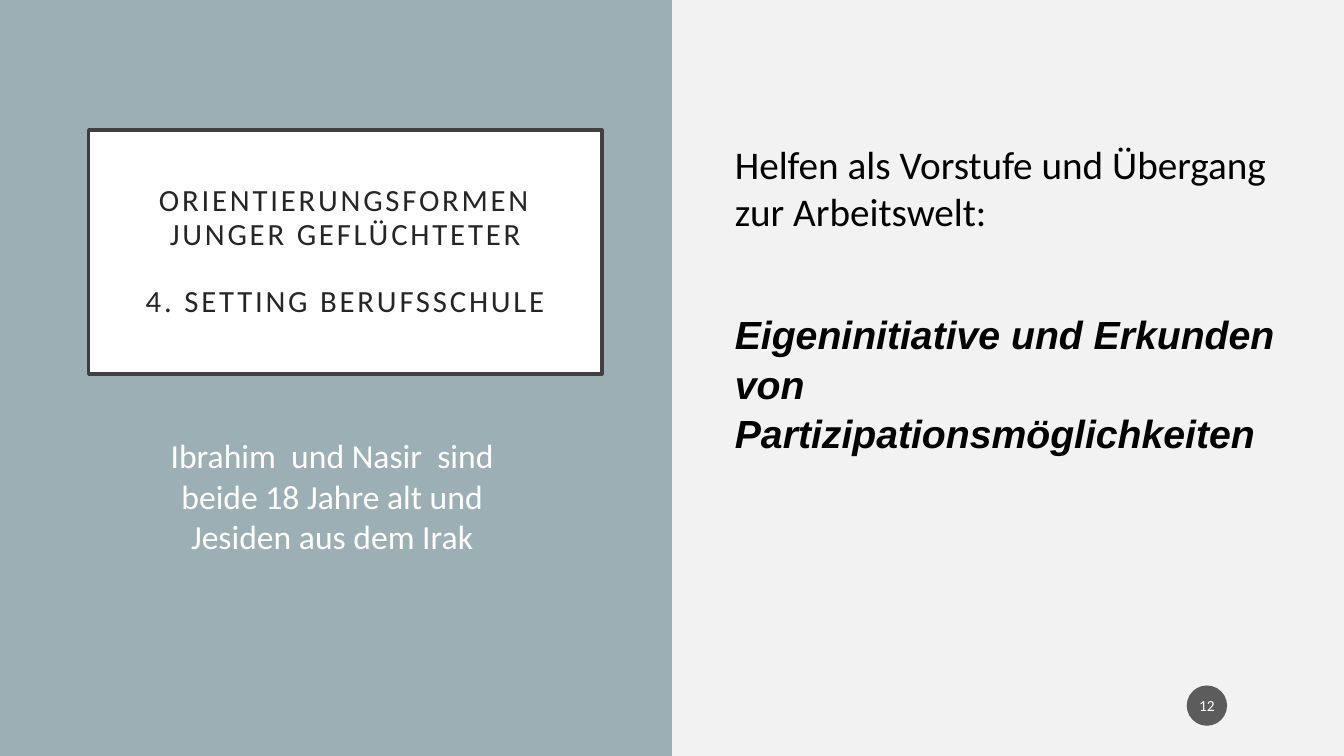
from dataclasses import dataclass

from lxml.etree import SubElement
from pptx import Presentation
from pptx.dml.color import RGBColor
from pptx.enum.shapes import MSO_SHAPE as Preset
from pptx.enum.text import MSO_ANCHOR as Anchor, PP_ALIGN as Align
from pptx.oxml.ns import qn
from pptx.shapes.autoshape import Shape
from pptx.slide import Slide
from pptx.util import Inches, Pt

SLIDE_WIDTH = Inches(13.33)
SLIDE_HEIGHT = Inches(7.5)


@dataclass(frozen=True)
class Area:
    """Position and size in percent of the slide."""
    left: float
    top: float
    width: float
    height: float

    def lengths(self) -> tuple[int, int, int, int]:
        return (
            round(SLIDE_WIDTH * self.left / 100),
            round(SLIDE_HEIGHT * self.top / 100),
            round(SLIDE_WIDTH * self.width / 100),
            round(SLIDE_HEIGHT * self.height / 100),
        )


@dataclass(frozen=True)
class Panel:
    area: Area
    fill: str
    preset: Preset = Preset.RECTANGLE
    line: str | None = None
    opacity: int = 100


LEFT_HALF = Panel(Area(0, 0, 50, 100), "9BAFB5")
TITLE_FRAME = Panel(Area(6.6, 17.2, 38.18, 32.27), "FFFFFF", line="404040")
PAGE_BADGE = Panel(Area(88.3, 90.67, 3, 5.33), "1D1D1D", Preset.OVAL, opacity=70)
STATEMENT_AREA = Area(53.94, 17.87, 42.54, 70.4)
PORTRAIT_AREA = Area(9.15, 56.93, 31.13, 26.8)


def color(value: str) -> RGBColor:
    return RGBColor.from_string(value)


def draw_panel(slide: Slide, panel: Panel) -> Shape:
    shape = slide.shapes.add_shape(panel.preset, *panel.area.lengths())
    shape.shadow.inherit = False
    shape.fill.solid()
    shape.fill.fore_color.rgb = color(panel.fill)
    if panel.opacity < 100:
        fill_color = shape.fill._xPr.find(qn("a:solidFill"))[0]
        SubElement(fill_color, qn("a:alpha"), val=str(panel.opacity * 1000))
    if panel.line:
        shape.line.color.rgb = color(panel.line)
        shape.line.width = Pt(2.5)
    else:
        shape.line.fill.background()
    return shape


def draw_text_box(slide: Slide, area: Area) -> Shape:
    shape = slide.shapes.add_textbox(*area.lengths())
    shape.text_frame.word_wrap = True
    return shape


def set_margins(shape: Shape, horizontal: float, vertical: float) -> None:
    frame = shape.text_frame
    frame.word_wrap = True
    frame.vertical_anchor = Anchor.MIDDLE
    frame.margin_left = frame.margin_right = Inches(horizontal)
    frame.margin_top = frame.margin_bottom = Inches(vertical)


def write(shape: Shape, text: str, *, size: float, fill: str,
          font: str = "Calibri", align: Align = Align.CENTER,
          emphasis: bool = False, before: float = 0,
          line_spacing: float = 1.0, tracking: float = 0) -> None:
    frame = shape.text_frame
    first = frame.paragraphs[0]
    paragraph = frame.add_paragraph() if first.runs else first
    paragraph.alignment = align
    paragraph.space_before = Pt(before)
    paragraph.line_spacing = line_spacing
    run = paragraph.add_run()
    run.text = text
    run.font.name = font
    run.font.size = Pt(size)
    run.font.bold = run.font.italic = emphasis
    run.font.color.rgb = color(fill)
    if tracking:
        run.font._element.set("spc", str(round(tracking * 100)))


def main() -> None:
    presentation = Presentation()
    presentation.slide_width = SLIDE_WIDTH
    presentation.slide_height = SLIDE_HEIGHT
    slide = presentation.slides.add_slide(presentation.slide_layouts[6])
    slide.background.fill.solid()
    slide.background.fill.fore_color.rgb = color("F2F2F2")

    draw_panel(slide, LEFT_HALF)

    title = draw_panel(slide, TITLE_FRAME)
    set_margins(title, 0.2, 0.2)
    title_format = {"size": 22, "fill": "262626", "line_spacing": 0.9, "tracking": 2}
    write(title, "ORIENTIERUNGSFORMEN JUNGER GEFLÜCHTETER", **title_format)
    write(title, "4. SETTING BERUFSSCHULE", before=24, **title_format)

    statement = draw_text_box(slide, STATEMENT_AREA)
    statement_format = {"size": 28, "fill": "000000", "align": Align.LEFT}
    write(statement, "Helfen als Vorstufe und Übergang zur Arbeitswelt:", **statement_format)
    write(statement, "Eigeninitiative und Erkunden von Partizipationsmöglichkeiten",
          font="Arial", emphasis=True, before=53, line_spacing=1.05, **statement_format)

    portrait = draw_text_box(slide, PORTRAIT_AREA)
    write(portrait, "Ibrahim  und Nasir  sind beide 18 Jahre alt und Jesiden aus dem Irak",
          size=24, fill="FFFFFF")

    badge = draw_panel(slide, PAGE_BADGE)
    set_margins(badge, 0.02, 0.05)
    write(badge, "12", size=11, fill="FFFFFF")

    presentation.save("out.pptx")


if __name__ == "__main__":
    main()
